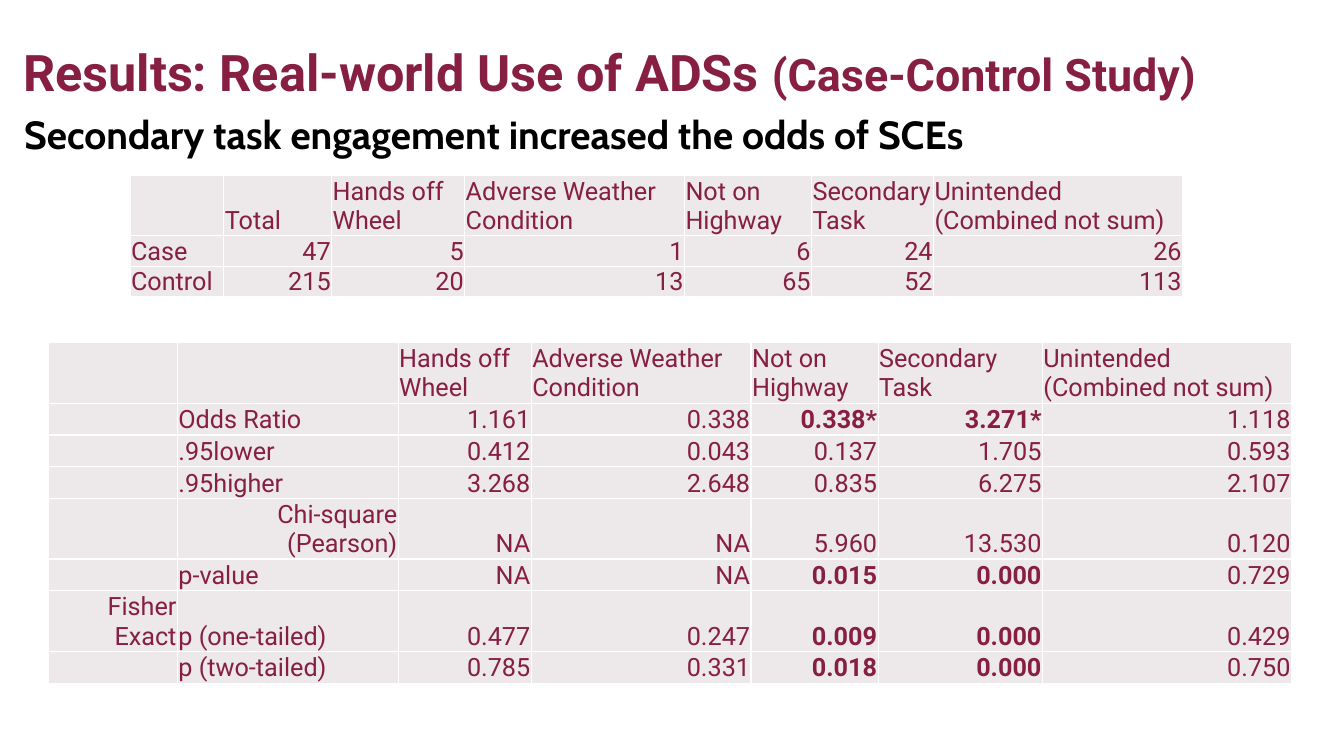
from dataclasses import dataclass
from itertools import product

from lxml.etree import SubElement
from pptx import Presentation
from pptx.dml.color import RGBColor
from pptx.enum.text import MSO_ANCHOR, MSO_AUTO_SIZE, PP_ALIGN
from pptx.oxml.ns import qn
from pptx.util import Emu, Inches, Pt

MAROON, BLACK, WHITE, CELL_GREY = "861F41", "000000", "FFFFFF", "EDE8E9"
TALL, SHORT, LOW = 6, 3.1, 3  # table row heights in grid units
OUTCOMES = ["Hands off Wheel", "Adverse Weather Condition", "Not on Highway",
            "Secondary Task", "Unintended (Combined not sum)"]


@dataclass
class Span:
    text: str
    size: float
    font: str
    color: str
    bold: bool = True


@dataclass
class Heading:
    index: int
    place: tuple[float, float, float, float]
    anchor: MSO_ANCHOR
    spans: list[Span]


@dataclass
class Grid:
    left: float
    top: float
    columns: list[float]
    rows: list[float]
    label_columns: int
    right_labels: set[str]
    bold_cells: set[tuple[int, int]]
    cells: list[list[str]]


HEADINGS = [
    Heading(0, (1.3, 4.4, 149.2, 6.1), MSO_ANCHOR.MIDDLE, [
        Span("Results: Real-world Use of ADSs ", 36, "Roboto", MAROON),
        Span("(Case-Control Study)", 32, "Roboto", MAROON)]),
    Heading(1, (1.4, 11, 130.1, 5.9), MSO_ANCHOR.TOP, [
        Span("Secondary task engagement increased the odds of SCEs", 28, "Cabin", BLACK)]),
]

ODDS = Grid(
    4.8, 34, [12.8, 21.9, 13.2, 21.8, 12.6, 16.3, 24.7],
    [TALL, SHORT, SHORT, SHORT, TALL, SHORT, TALL, SHORT], 2,
    {"Chi-square (Pearson)", "Fisher Exact"},
    set(product((1, 5, 6, 7), (4, 5))),  # significant results
    [["", "", *OUTCOMES],
     ["", "Odds Ratio", "1.161", "0.338", "0.338*", "3.271*", "1.118"],
     ["", ".95lower", "0.412", "0.043", "0.137", "1.705", "0.593"],
     ["", ".95higher", "3.268", "2.648", "0.835", "6.275", "2.107"],
     ["", "Chi-square (Pearson)", "NA", "NA", "5.960", "13.530", "0.120"],
     ["", "p-value", "NA", "NA", "0.015", "0.000", "0.729"],
     ["Fisher Exact", "p (one-tailed)", "0.477", "0.247", "0.009", "0.000", "0.429"],
     ["", "p (two-tailed)", "0.785", "0.331", "0.018", "0.000", "0.750"]])

COUNTS = Grid(
    12.9, 17.4, [9.3, 10.7, 13.2, 21.8, 12.6, 12.1, 24.7], [TALL, LOW, LOW], 1, set(), set(),
    [["", "Total", *OUTCOMES],
     ["Case", "47", "5", "1", "6", "24", "26"],
     ["Control", "215", "20", "13", "65", "52", "113"]])


def unit(count: float) -> Emu:
    """Length of a number of grid columns or rows, each a tenth of an inch."""
    return Inches(count / 10)


def color(value: str) -> RGBColor:
    return RGBColor.from_string(value)


def apply(target, values: dict) -> None:
    for name, value in values.items():
        setattr(target, name, value)


def add_span(para, span: Span) -> None:
    run = para.add_run()
    run.text = span.text
    apply(run.font, {"size": Pt(span.size), "name": span.font, "bold": span.bold})
    run.font.color.rgb = color(span.color)


def fill_heading(page, heading: Heading) -> None:
    box = page.placeholders[heading.index]
    left, top, width, height = map(unit, heading.place)
    apply(box, {"left": left, "top": top, "width": width, "height": height})
    apply(box.text_frame, {"word_wrap": True, "auto_size": MSO_AUTO_SIZE.NONE,
                           "vertical_anchor": heading.anchor})
    para = box.text_frame.paragraphs[0]
    properties = para._p.get_or_add_pPr()
    apply_indent = {"marL": "0", "indent": "0"}
    for name, value in apply_indent.items():
        properties.set(name, value)
    SubElement(properties, qn("a:buNone"))
    apply(para, {"alignment": PP_ALIGN.LEFT, "line_spacing": 0.9, "space_before": Pt(0)})
    for span in heading.spans:
        add_span(para, span)


def style_cell(cell) -> None:
    apply(cell, {"margin_left": Inches(0.01), "margin_right": Inches(0.01),
                 "margin_top": Inches(0.01), "margin_bottom": 0,
                 "vertical_anchor": MSO_ANCHOR.BOTTOM})
    properties = cell._tc.get_or_add_tcPr()
    for side in ("lnL", "lnR", "lnT", "lnB"):
        line = SubElement(properties, qn(f"a:{side}"), w=str(Pt(1)))
        SubElement(SubElement(line, qn("a:solidFill")), qn("a:srgbClr"), val=WHITE)
    cell.fill.solid()
    cell.fill.fore_color.rgb = color(CELL_GREY)


def add_grid(page, grid: Grid) -> None:
    frame = page.shapes.add_table(
        len(grid.rows), len(grid.columns), unit(grid.left), unit(grid.top),
        unit(sum(grid.columns)), unit(sum(grid.rows)))
    table = frame.table
    apply(table, {"first_row": False, "horz_banding": False})
    for column, width in zip(table.columns, grid.columns):
        column.width = unit(width)
    for row, height in zip(table.rows, grid.rows):
        row.height = unit(height)
    for r, c in product(range(len(grid.rows)), range(len(grid.columns))):
        cell, text = table.cell(r, c), grid.cells[r][c]
        style_cell(cell)
        if text:
            para = cell.text_frame.paragraphs[0]
            is_value = r > 0 and c >= grid.label_columns
            to_right = is_value or text in grid.right_labels
            para.alignment = PP_ALIGN.RIGHT if to_right else PP_ALIGN.LEFT
            add_span(para, Span(text, 18, "Roboto", MAROON, (r, c) in grid.bold_cells))


def main() -> None:
    deck = Presentation()
    apply(deck, {"slide_width": Inches(13.33), "slide_height": Inches(7.5)})
    page = deck.slides.add_slide(deck.slide_layouts[1])
    # Title and key finding
    for heading in HEADINGS:
        fill_heading(page, heading)
    # Odds ratios below, case and control counts above
    for grid in (ODDS, COUNTS):
        add_grid(page, grid)
    deck.save("out.pptx")


if __name__ == "__main__":
    main()
